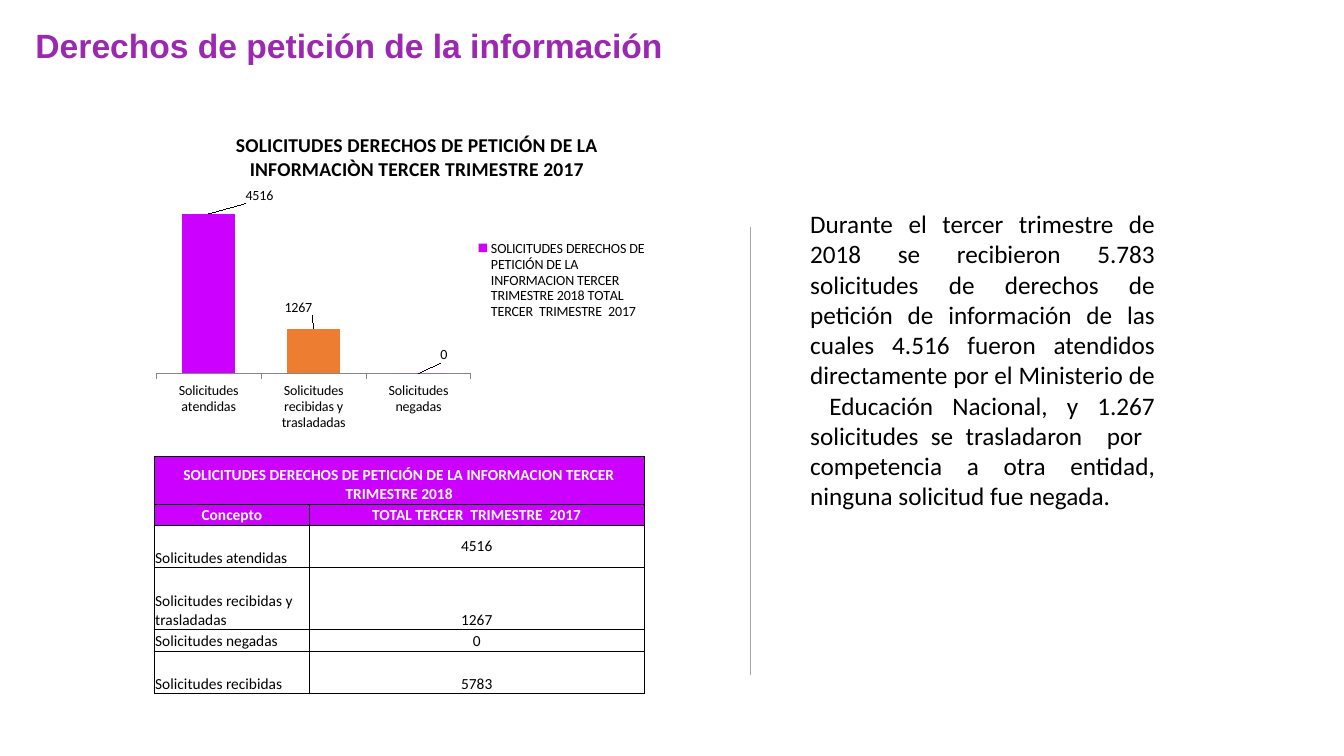
from lxml.etree import SubElement
from pptx import Presentation
from pptx.chart.data import CategoryChartData
from pptx.dml.color import RGBColor
from pptx.enum.chart import XL_CHART_TYPE, XL_LABEL_POSITION, XL_LEGEND_POSITION, XL_TICK_LABEL_POSITION, XL_TICK_MARK
from pptx.enum.shapes import MSO_CONNECTOR
from pptx.enum.text import MSO_ANCHOR, PP_ALIGN
from pptx.oxml import parse_xml
from pptx.oxml.ns import nsdecls, qn
from pptx.util import Cm, Pt

PURPLE = "CC00FF"
BLACK = "000000"
WHITE = "FFFFFF"
CONCEPTS = ["Solicitudes atendidas", "Solicitudes recibidas y trasladadas", "Solicitudes negadas"]
TOTALS = [4516, 1267, 0]
TABLE_TITLE = "SOLICITUDES DERECHOS DE PETICIÓN DE LA INFORMACION TERCER TRIMESTRE 2018"
TOTAL_HEADING = "TOTAL TERCER  TRIMESTRE  2017"
CHART_TITLE = "SOLICITUDES DERECHOS DE PETICIÓN DE LA INFORMACIÒN TERCER TRIMESTRE 2017"
SUMMARY = (
    "Durante el tercer trimestre de 2018 se recibieron 5.783 solicitudes de derechos de petición "
    "de información de las cuales 4.516 fueron atendidos directamente por el Ministerio de  "
    "Educación Nacional, y 1.267 solicitudes se trasladaron  por  competencia a otra entidad, "
    "ninguna solicitud fue negada."
)


def rgb(value):
    return RGBColor.from_string(value)


def format_font(font, size, color=BLACK, bold=False, name="Calibri"):
    font.name = name
    font.size = Pt(size)
    font.bold = bold
    font.color.rgb = rgb(color)


def write(tf, text, align=PP_ALIGN.LEFT, anchor=MSO_ANCHOR.TOP, **font):
    tf.word_wrap = True
    tf.vertical_anchor = anchor
    p = tf.paragraphs[0]
    p.alignment = align
    r = p.add_run()
    r.text = text
    format_font(r.font, **font)


def add_title(s, text):
    sp = s.shapes.title
    sp.left, sp.top, sp.width, sp.height = Cm(0.64), Cm(0.51), Cm(18.87), Cm(2.82)
    write(sp.text_frame, text, size=24, color="9C28B1", bold=True, name="Arial")


def add_summary(s, text):
    sp = s.shapes.add_textbox(Cm(20.17), Cm(5.13), Cm(9.19), Cm(7.95))
    write(sp.text_frame, text, align=PP_ALIGN.JUSTIFY, size=18)


def add_divider(s):
    line = s.shapes.add_connector(MSO_CONNECTOR.STRAIGHT, Cm(18.9), Cm(17.02), Cm(18.9), Cm(5.72))
    line.line.color.rgb = rgb("A6A6A6")
    line.line.width = Pt(0.5)
    SubElement(line._element.spPr, qn("a:effectLst"))


def add_borders(cell):
    tcPr = cell._tc.get_or_add_tcPr()
    for side in ("lnL", "lnR", "lnT", "lnB"):
        tcPr.append(parse_xml(
            f'<a:{side} {nsdecls("a")} w="6350"><a:solidFill><a:srgbClr val="{BLACK}"/></a:solidFill></a:{side}>'
        ))


def fill_cell(cell, text, heading, align, anchor):
    cell.margin_left = cell.margin_right = cell.margin_top = Cm(0.02)
    cell.margin_bottom = Cm(0)
    cell.vertical_anchor = anchor
    add_borders(cell)
    if heading:
        cell.fill.solid()
        cell.fill.fore_color.rgb = rgb(PURPLE)
    else:
        cell.fill.background()
    p = cell.text_frame.paragraphs[0]
    p.alignment = align
    r = p.add_run()
    r.text = text
    format_font(r.font, 11, WHITE if heading else BLACK, heading)


def add_requests_table(s):
    widths = [3.91, 8.43]
    heights = [1.19, 0.53, 1.07, 1.57, 0.53, 1.07]
    rows = [(TABLE_TITLE, ""), ("Concepto", TOTAL_HEADING), *zip(CONCEPTS, TOTALS),
            ("Solicitudes recibidas", sum(TOTALS))]
    frame = s.shapes.add_table(len(rows), 2, Cm(3.89), Cm(11.51), Cm(sum(widths)), Cm(sum(heights)))
    table = frame.table
    table.first_row = table.horz_banding = False
    for column, width in zip(table.columns, widths):
        column.width = Cm(width)
    for i, (values, height) in enumerate(zip(rows, heights)):
        table.rows[i].height = Cm(height)
        for j, value in enumerate(values):
            heading = i < 2
            align = PP_ALIGN.CENTER if heading or j else PP_ALIGN.LEFT
            anchor = MSO_ANCHOR.MIDDLE if (i, j) == (2, 1) else MSO_ANCHOR.BOTTOM
            fill_cell(table.cell(i, j), str(value), heading, align, anchor)
    table.cell(0, 0).merge(table.cell(0, 1))


def chart_layout(target="", modes=True, **place):
    parts = f'<c:layoutTarget val="{target}"/>' if target else ""
    if modes:
        parts += '<c:xMode val="edge"/><c:yMode val="edge"/>'
    parts += "".join(f'<c:{key} val="{value}"/>' for key, value in place.items())
    return parse_xml(f'<c:layout {nsdecls("c")}><c:manualLayout>{parts}</c:manualLayout></c:layout>')


def place_after(parent, tag, layout):
    for old in parent.findall(qn("c:layout")):
        parent.remove(old)
    if tag:
        parent.find(qn(tag)).addnext(layout)
    else:
        parent.insert(0, layout)


def format_series(plot):
    series = plot.series[0]
    series.invert_if_negative = False
    for i, color in enumerate([PURPLE, "ED7D31"]):
        fill = series.points[i].format.fill if i else series.format.fill
        fill.solid()
        fill.fore_color.rgb = rgb(color)
    labels = series.data_labels
    labels.show_value = True
    labels.position = XL_LABEL_POSITION.OUTSIDE_END
    format_font(labels.font, 10)
    for i, (x, y) in enumerate([(0.1, -0.02), (-0.03, -0.03), (0.05, -0.02)]):
        label = series.points[i].data_label
        label.position = XL_LABEL_POSITION.OUTSIDE_END
        dLbl = labels._element.findall(qn("c:dLbl"))[i]
        place_after(dLbl, "c:idx", chart_layout(modes=False, x=x, y=y))


def add_requests_chart(s):
    data = CategoryChartData()
    data.categories = CONCEPTS
    data.add_series(f"{TABLE_TITLE} {TOTAL_HEADING}", TOTALS)
    frame = s.shapes.add_chart(XL_CHART_TYPE.COLUMN_CLUSTERED, Cm(3.68), Cm(3.05), Cm(12.8), Cm(7.95), data)
    chart = frame.chart
    format_font(chart.font, 10)

    chart.has_title = True
    write(chart.chart_title.text_frame, CHART_TITLE, align=PP_ALIGN.CENTER, size=14, bold=True)
    place_after(chart.chart_title._element, "c:tx", chart_layout(x=0.17, y=0.02))

    chart.has_legend = True
    chart.legend.position = XL_LEGEND_POSITION.RIGHT
    chart.legend.include_in_layout = False
    place_after(chart.legend._element, "c:legendPos", chart_layout(x=0.66, y=0.37, w=0.33, h=0.27))

    axis = chart.category_axis
    axis.major_tick_mark = XL_TICK_MARK.OUTSIDE
    axis.tick_label_position = XL_TICK_LABEL_POSITION.LOW
    axis.format.line.color.rgb = rgb("868686")
    chart.value_axis.minimum_scale = 0
    chart.value_axis.maximum_scale = 5000
    chart.value_axis.has_major_gridlines = False
    chart.value_axis.visible = False

    plot = chart.plots[0]
    plot.gap_width = 100
    plot.vary_by_categories = False
    format_series(plot)
    plot_area = chart._chartSpace.chart.plotArea
    place_after(plot_area, None, chart_layout("inner", x=0.02, y=0.24, w=0.62, h=0.56))


def main():
    prs = Presentation()
    prs.slide_width, prs.slide_height = Cm(33.87), Cm(19.05)
    s = prs.slides.add_slide(prs.slide_layouts[5])
    add_divider(s)
    add_title(s, "Derechos de petición de la información")
    add_summary(s, SUMMARY)
    add_requests_table(s)
    add_requests_chart(s)
    prs.save("out.pptx")


if __name__ == "__main__":
    main()
